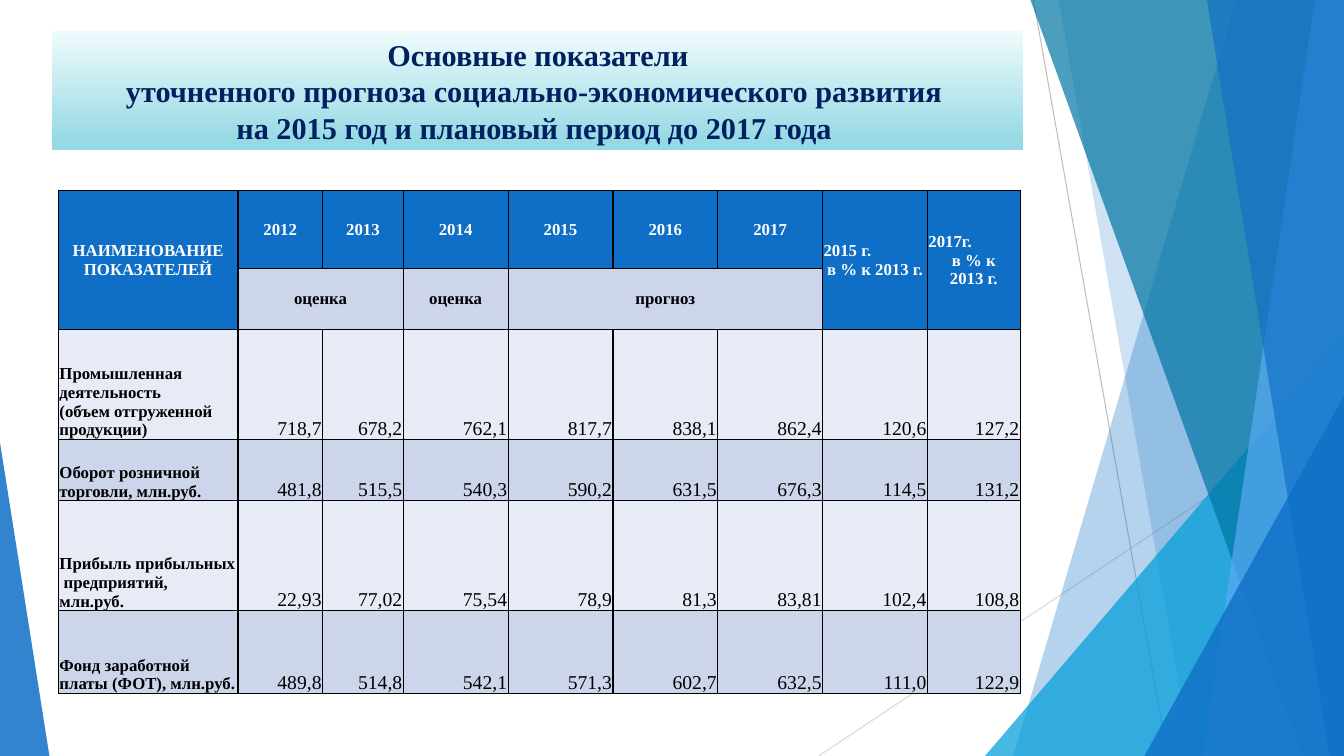
from lxml.etree import SubElement
from pptx import Presentation
from pptx.dml.color import RGBColor
from pptx.enum.shapes import MSO_CONNECTOR, MSO_SHAPE
from pptx.enum.text import MSO_ANCHOR, PP_ALIGN
from pptx.oxml import parse_xml
from pptx.oxml.ns import nsdecls, qn
from pptx.util import Pt

SCALE = 9144
FONT = "Times New Roman"
COLORS = {
    "black": "000000", "white": "FFFFFF", "navy": "002060", "blue": "0F6FC6",
    "cyan": "009DD9", "teal": "0076A3", "sky": "59AAF2", "mist": "EFFBFC",
    "aqua": "95D9E4", "pale": "E7EBF5", "band": "CCD5EA",
    "light_gray": "D9D9D9", "gray": "BFBFBF",
}
LINES = [((812, 750), (1333, 403), "light_gray"), ((1025, 0), (1158, 750), "gray")]
FACETS = [
    ("blue", 30, [(1226, 0), (1005, 750), (1333, 750), (1333, 0)]),
    ("blue", 20, [(1050, 0), (1182, 750), (1333, 750), (1333, 0)]),
    ("cyan", 72, [(977, 750), (1333, 333), (1333, 750)]),
    ("teal", 70, [(1022, 0), (1292, 750), (1333, 750), (1333, 0)]),
    ("sky", 70, [(1304, 0), (1193, 750), (1333, 750), (1333, 0)]),
    ("blue", 65, [(1197, 0), (1319, 750), (1333, 750), (1333, 0)]),
    ("blue", 80, [(1135, 750), (1333, 393), (1333, 750)]),
    ("blue", 85, [(0, 439), (49, 750), (0, 750)]),
]
TITLE = ("Основные показатели\vуточненного прогноза социально-экономического развития "
         "\vна 2015 год и плановый период до 2017 года ")
COLUMNS = [178, 84, 80, 104, 104, 104, 104, 104, 92]
ROWS = [77, 61, 109, 61, 109, 82]
MERGES = [(0, 0, 1, 0), (0, 7, 1, 7), (0, 8, 1, 8), (1, 1, 1, 2), (1, 4, 1, 6)]
HEADER = ["НАИМЕНОВАНИЕ ПОКАЗАТЕЛЕЙ", "2012", "2013", "2014", "2015", "2016", "2017",
          "2015 г.\nв % к 2013 г.", "2017г.\nв % к\n2013 г."]
PERIODS = {1: "оценка", 3: "оценка", 4: "прогноз"}
INDICATORS = [
    ("Промышленная деятельность\v(объем отгруженной продукции)",
     "718,7 678,2 762,1 817,7 838,1 862,4 120,6 127,2"),
    ("Оборот розничной торговли, млн.руб.",
     "481,8 515,5 540,3 590,2 631,5 676,3 114,5 131,2"),
    ("Прибыль прибыльных\v предприятий,\vмлн.руб.",
     "22,93 77,02 75,54 78,9 81,3 83,81 102,4 108,8"),
    ("Фонд заработной платы (ФОТ), млн.руб.",
     "489,8 514,8 542,1 571,3 602,7 632,5 111,0 122,9"),
]


def px(value):
    """Turn whole px into EMU."""
    return value * SCALE


def rgb(name):
    """Look up a named colour."""
    return RGBColor.from_string(COLORS[name])


def assign(target, values):
    """Set each attribute in values on target."""
    for key, value in values.items():
        setattr(target, key, value)


class SlidePainter:
    """Hold the deck style and draw on the current slide."""

    def __init__(self, deck):
        """Add a blank slide to the deck."""
        self.page = deck.slides.add_slide(deck.slide_layouts[6])

    def line(self, start, end, color):
        """Draw a thin straight line."""
        connector = self.page.shapes.add_connector(
            MSO_CONNECTOR.STRAIGHT, *map(px, start + end))
        connector.line.color.rgb = rgb(color)
        connector.line.width = Pt(0.75)
        SubElement(connector._element.spPr, qn("a:effectLst"))

    def facet(self, color, opacity, points):
        """Draw a translucent polygon."""
        builder = self.page.shapes.build_freeform(*points[0], scale=SCALE)
        builder.add_line_segments(points[1:], close=True)
        shape = builder.convert_to_shape()
        shape.shadow.inherit = False
        shape.line.fill.background()
        shape.fill.solid()
        shape.fill.fore_color.rgb = rgb(color)
        tint = shape.fill._xPr.find(qn("a:solidFill"))[0]
        SubElement(tint, qn("a:alpha"), val=str(opacity * 1000))

    def paragraph(self, para, text, size, color, bold, align):
        """Write one styled paragraph."""
        para.text = text
        para.alignment = align
        for span in para.runs:
            assign(span.font, {"name": FONT, "size": Pt(size), "bold": bold})
            span.font.color.rgb = rgb(color)

    def title(self, left, top, width, height, text):
        """Draw the heading on a gradient band."""
        box = self.page.shapes.add_shape(
            MSO_SHAPE.RECTANGLE, *map(px, (left, top, width, height)))
        box.shadow.inherit = False
        box.line.fill.background()
        box.fill.gradient()
        box.fill.gradient_angle = 270
        for stop, (position, color) in zip(
                box.fill.gradient_stops, [(0, "mist"), (0.94, "aqua")]):
            stop.position = position
            stop.color.rgb = rgb(color)
        assign(box.text_frame, {"word_wrap": True, "vertical_anchor": MSO_ANCHOR.MIDDLE,
                                "margin_top": 0, "margin_bottom": 0})
        para = box.text_frame.paragraphs[0]
        self.paragraph(para, text, 21.6, "navy", True, PP_ALIGN.CENTER)
        para.line_spacing = Pt(26)

    def table(self, left, top, columns, rows, merges):
        """Add an empty table with merged cells."""
        frame = self.page.shapes.add_table(
            len(rows), len(columns), *map(px, (left, top, sum(columns), sum(rows))))
        grid = frame.table
        assign(grid, {"first_row": False, "horz_banding": False})
        for column, width in zip(grid.columns, columns):
            column.width = px(width)
        for row, height in zip(grid.rows, rows):
            row.height = px(height)
        for first_row, first_column, last_row, last_column in merges:
            grid.cell(first_row, first_column).merge(grid.cell(last_row, last_column))
        return grid

    def cell(self, cell, text, fill, anchor, aligns, size=12, color="black", bold=True):
        """Fill, outline and write one cell."""
        assign(cell, {"margin_left": px(1), "margin_right": px(1), "margin_top": px(1),
                      "margin_bottom": 0, "vertical_anchor": anchor})
        properties = cell._tc.get_or_add_tcPr()
        for side in ("lnL", "lnR", "lnT", "lnB"):
            properties.append(parse_xml(
                f'<a:{side} {nsdecls("a")} w="12700"><a:solidFill>'
                f'<a:srgbClr val="{COLORS["black"]}"/></a:solidFill></a:{side}>'))
        cell.fill.solid()
        cell.fill.fore_color.rgb = rgb(fill)
        for index, part in enumerate(text.split("\n")):
            frame = cell.text_frame
            para = frame.add_paragraph() if index else frame.paragraphs[0]
            self.paragraph(para, part, size, color, bold, aligns[min(index, len(aligns) - 1)])


def main():
    """Build and save the forecast slide."""
    deck = Presentation()
    assign(deck, {"slide_width": px(1333), "slide_height": px(750)})
    painter = SlidePainter(deck)
    for line in LINES:
        painter.line(*line)
    for facet in FACETS:
        painter.facet(*facet)
    painter.title(52, 31, 963, 118, TITLE)

    grid = painter.table(58, 189, COLUMNS, ROWS, MERGES)
    center, middle, bottom = [PP_ALIGN.CENTER], MSO_ANCHOR.MIDDLE, MSO_ANCHOR.BOTTOM
    for column, text in enumerate(HEADER):
        aligns = [PP_ALIGN.LEFT] + center if "\n" in text else center
        painter.cell(grid.cell(0, column), text, "blue", middle, aligns, color="white")
        period = PERIODS.get(column, "")
        fill = "band" if 1 <= column <= 6 else "blue"
        painter.cell(grid.cell(1, column), period, fill, middle, center)
    for row, (name, values) in enumerate(INDICATORS, 2):
        fill = "band" if row % 2 else "pale"
        painter.cell(grid.cell(row, 0), name, fill, bottom, [PP_ALIGN.LEFT])
        for column, value in enumerate(values.split(), 1):
            painter.cell(grid.cell(row, column), value, fill, bottom,
                         [PP_ALIGN.RIGHT], size=14, bold=False)
    deck.save("out.pptx")


if __name__ == "__main__":
    main()
